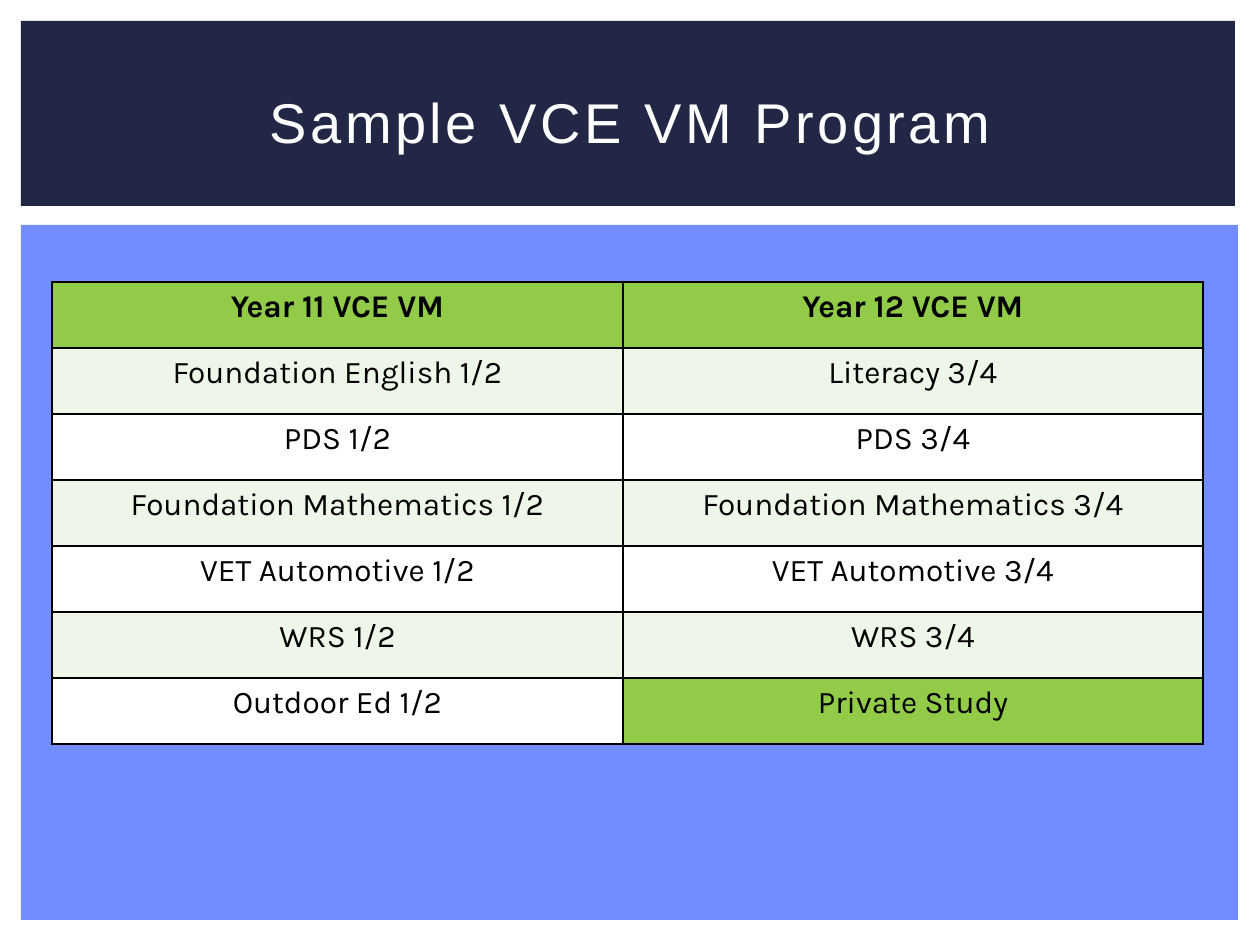
from lxml.etree import SubElement
from pptx import Presentation
from pptx.dml.color import RGBColor
from pptx.enum.shapes import MSO_SHAPE
from pptx.enum.text import MSO_ANCHOR, PP_ALIGN
from pptx.oxml.ns import qn
from pptx.util import Pt

EMU_PER_PX = 914400 / 126
NAVY, BLUE, GREEN, PALE, WHITE, BLACK = (
    "212745", "718DFF", "91CB48", "EEF6E9", "FFFFFF", "000000")
PROGRAM = [
    ("Year 11 VCE VM", "Year 12 VCE VM"),
    ("Foundation English 1/2", "Literacy 3/4"),
    ("PDS 1/2", "PDS 3/4"),
    ("Foundation Mathematics 1/2", "Foundation Mathematics 3/4"),
    ("VET Automotive 1/2", "VET Automotive 3/4"),
    ("WRS 1/2", "WRS 3/4"),
    ("Outdoor Ed 1/2", "Private Study"),
]
COLUMN_WIDTHS = (571, 580)
ROW_HEIGHT = 66


def px(length):
    return round(length * EMU_PER_PX)


def paint(color_format, color):
    color_format.rgb = RGBColor.from_string(color)


def fill_solid(target, color):
    target.fill.solid()
    paint(target.fill.fore_color, color)


def write(text_frame, text, color, **font_format):
    """Set centred text in one run and return the run."""
    paragraph = text_frame.paragraphs[0]
    paragraph.alignment = PP_ALIGN.CENTER
    run = paragraph.add_run()
    run.text = text
    for name, value in font_format.items():
        setattr(run.font, name, value)
    paint(run.font.color, color)
    return run


def add_panel(slide, box, color):
    panel = slide.shapes.add_shape(MSO_SHAPE.RECTANGLE, *map(px, box))
    panel.shadow.inherit = False
    panel.line.fill.background()
    fill_solid(panel, color)


def add_borders(cell):
    """Outline a cell in black; the borders must precede the cell's fill."""
    properties = cell._tc.get_or_add_tcPr()
    for side in ("a:lnL", "a:lnR", "a:lnT", "a:lnB"):
        line = SubElement(properties, qn(side), w=str(Pt(1)))
        SubElement(SubElement(line, qn("a:solidFill")), qn("a:srgbClr"), val=BLACK)


def cell_color(row, text):
    if row == 0 or text == "Private Study":
        return GREEN
    return PALE if row % 2 else WHITE


def add_program_table(slide, left, top):
    size = sum(COLUMN_WIDTHS), ROW_HEIGHT * len(PROGRAM)
    table = slide.shapes.add_table(
        len(PROGRAM), len(COLUMN_WIDTHS), *map(px, (left, top, *size))).table
    for column, width in zip(table.columns, COLUMN_WIDTHS):
        column.width = px(width)
    for row, texts in enumerate(PROGRAM):
        table.rows[row].height = px(ROW_HEIGHT)
        for column, text in enumerate(texts):
            cell = table.cell(row, column)
            add_borders(cell)
            fill_solid(cell, cell_color(row, text))
            write(cell.text_frame, text, BLACK, name="Karla", size=Pt(18), bold=row == 0)


def place_title(slide, text, box):
    """Format the title placeholder and bring it in front of the panels."""
    title = slide.shapes.title
    for name, length in zip(("left", "top", "width", "height"), box):
        setattr(title, name, px(length))
    title.text_frame.vertical_anchor = MSO_ANCHOR.MIDDLE
    run = write(title.text_frame, text, WHITE, name="Arial", size=Pt(32))
    run.font._element.set("spc", "200")
    title.element.getparent().append(title.element)


def main():
    presentation = Presentation()
    presentation.slide_width, presentation.slide_height = px(1260), px(945)
    slide = presentation.slides.add_slide(presentation.slide_layouts[5])
    add_panel(slide, (21, 225, 1217, 695), BLUE)
    add_panel(slide, (21, 21, 1214, 185), NAVY)
    add_program_table(slide, 52, 282)
    place_title(slide, "Sample VCE VM Program", (53, 49, 1155, 145))
    presentation.save("out.pptx")


if __name__ == "__main__":
    main()
